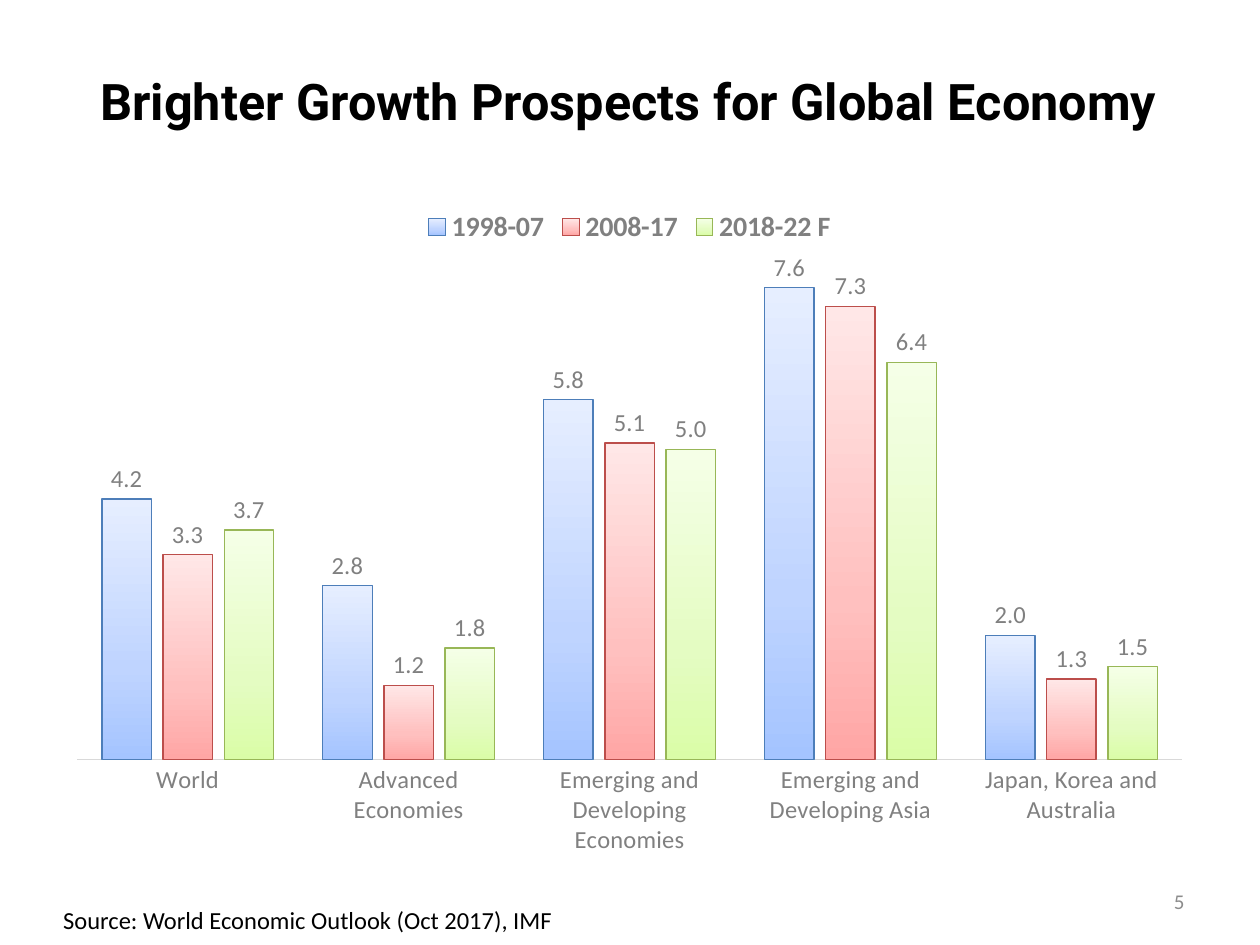
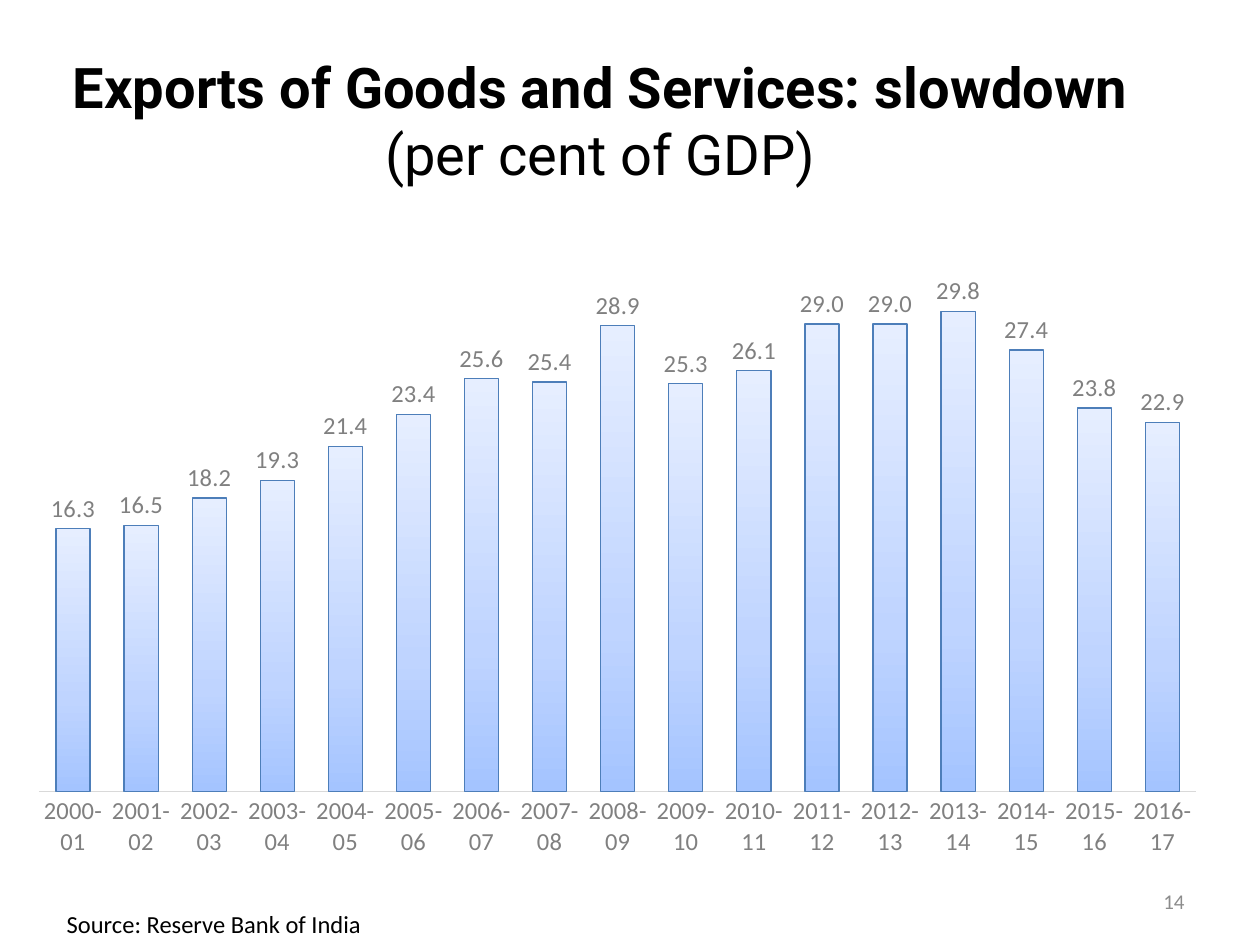
from lxml.etree import SubElement
from pptx import Presentation
from pptx.chart.data import CategoryChartData
from pptx.dml.color import RGBColor
from pptx.enum.chart import XL_CHART_TYPE, XL_LABEL_POSITION, XL_LEGEND_POSITION, XL_TICK_MARK
from pptx.enum.text import MSO_ANCHOR, MSO_AUTO_SIZE, PP_ALIGN
from pptx.oxml.ns import qn
from pptx.util import Pt

COLORS = {"text": "000000", "label": "808080", "number": "8C8C8C", "axis": "D9D9D9"}
BARS = [
    {"line": "4D7EB9", "stops": {0: "A4C4FF", 35: "BFD4FF", 100: "E6EEFF"}},
    {"line": "BC4E4B", "stops": {0: "FFA6A5", 35: "FFC0BF", 100: "FFE7E7"}},
    {"line": "98B757", "stops": {0: "DAFDA7", 35: "E4FCC2", 100: "F5FFE7"}},
]
GROWTH_REGIONS = ["World", "Advanced Economies", "Emerging and Developing Economies",
                  "Emerging and Developing Asia", "Japan, Korea and Australia"]
GROWTH = {
    "1998-07": [4.2, 2.8, 5.8, 7.6, 2.0],
    "2008-17": [3.3, 1.2, 5.1, 7.3, 1.3],
    "2018-22 F": [3.7, 1.8, 5.0, 6.4, 1.5],
}
EXPORT_YEARS = [f"{year}-{(year + 1) % 100:02d}" for year in range(2000, 2017)]
EXPORTS = {"Series 1": [16.3, 16.5, 18.2, 19.3, 21.4, 23.4, 25.6, 25.4, 28.9,
                        25.3, 26.1, 29.0, 29.0, 29.8, 27.4, 23.8, 22.9]}


class Deck:
    """Holds the shared style and the slide being built."""

    def __init__(self):
        """Start a 10 by 7.5 inch deck."""
        self.deck = Presentation()
        self.deck.slide_width, self.deck.slide_height = Pt(720), Pt(540)
        self.page = None

    def style(self, font, size, color="label", name="Calibri", bold=False):
        """Apply one text format to a font."""
        for key, value in {"size": Pt(size), "name": name, "bold": bold}.items():
            setattr(font, key, value)
        font.color.rgb = RGBColor.from_string(COLORS[color])

    def title(self, place, size, heading, detail=None):
        """Add a slide with a bold heading and an optional lighter second line."""
        self.page = self.deck.slides.add_slide(self.deck.slide_layouts[5])
        box = self.page.shapes.title
        for key, value in zip(("left", "top", "width", "height"), place):
            setattr(box, key, Pt(value))
        frame = box.text_frame
        frame.auto_size, frame.vertical_anchor = MSO_AUTO_SIZE.NONE, MSO_ANCHOR.MIDDLE
        para = frame.paragraphs[0]
        para.alignment = PP_ALIGN.CENTER
        span = para.add_run()
        span.text = heading
        self.style(span.font, size, "text", "Roboto", True)
        if detail:
            para.add_line_break()
            span = para.add_run()
            span.text = detail
            self.style(span.font, size, "text", "Roboto")

    def text(self, place, words, size, color, align=PP_ALIGN.LEFT, anchor=MSO_ANCHOR.TOP):
        """Add a line of text."""
        frame = self.page.shapes.add_textbox(*map(Pt, place)).text_frame
        frame.word_wrap, frame.vertical_anchor = True, anchor
        para = frame.paragraphs[0]
        para.alignment = align
        span = para.add_run()
        span.text = words
        self.style(span.font, size, color)

    def footer(self, left, top, source, number):
        """Add the source note and the page number."""
        self.text((left, top, 323, 24.5), source, 14, "text")
        self.text((516, 500.5, 168, 28.75), str(number), 12, "number",
                  PP_ALIGN.RIGHT, MSO_ANCHOR.MIDDLE)

    def chart(self, place, categories, values, top_value):
        """Add a column chart with gradient bars and a hidden value axis."""
        data = CategoryChartData(number_format="0.0")
        data.categories = categories
        for name, numbers in values.items():
            data.add_series(name, numbers)
        chart = self.page.shapes.add_chart(
            XL_CHART_TYPE.COLUMN_CLUSTERED, *map(Pt, place), data).chart
        self.style(chart.font, 14, "text")
        chart.has_title = False
        chart.has_legend = len(values) > 1
        if chart.has_legend:
            chart.legend.position = XL_LEGEND_POSITION.TOP
            chart.legend.include_in_layout = False
            self.style(chart.legend.font, 16, bold=True)
        self.axes(chart, top_value)
        plot = chart.plots[0]
        for key, value in {"gap_width": 100, "overlap": -24, "vary_by_categories": False}.items():
            setattr(plot, key, value)
        for series, look in zip(plot.series, BARS):
            self.bars(series, look)

    def axes(self, chart, top_value):
        """Format the category axis and hide the value axis."""
        axis = chart.category_axis
        axis.major_tick_mark = axis.minor_tick_mark = XL_TICK_MARK.NONE
        axis.format.line.width = Pt(0.75)
        axis.format.line.color.rgb = RGBColor.from_string(COLORS["axis"])
        self.style(axis.tick_labels.font, 14)
        axis._element.find(qn("c:txPr")).find(qn("a:bodyPr")).set("rot", "0")
        scale = {"visible": False, "has_major_gridlines": False,
                 "minimum_scale": 0, "maximum_scale": top_value}
        for key, value in scale.items():
            setattr(chart.value_axis, key, value)

    def bars(self, series, look):
        """Give a series its gradient, outline and value labels."""
        fill = series.format.fill
        fill.gradient()
        fill.gradient_angle = 90
        stops = series._element.find(".//" + qn("a:gsLst"))
        stops.clear()
        for position, color in look["stops"].items():
            stop = SubElement(stops, qn("a:gs"), pos=str(position * 1000))
            SubElement(stop, qn("a:srgbClr"), val=color)
        series.format.line.width = Pt(0.75)
        series.format.line.color.rgb = RGBColor.from_string(look["line"])
        labels = series.data_labels
        settings = {"show_value": True, "number_format": "0.0",
                    "number_format_is_linked": False,
                    "position": XL_LABEL_POSITION.OUTSIDE_END}
        for key, value in settings.items():
            setattr(labels, key, value)
        self.style(labels.font, 14)


def main():
    """Build both slides and save the deck."""
    show = Deck()
    show.title((0, 26, 718.5, 62.5), 28.8, "Brighter Growth Prospects for Global Economy")
    show.chart((31, 111.5, 657.5, 385), GROWTH_REGIONS, GROWTH, 8)
    show.footer(29, 513.5, "Source: World Economic Outlook (Oct 2017), IMF", 5)

    show.title((14.5, 26, 657.5, 85), 32, "Exports of Goods and Services: slowdown",
               "(per cent of GDP)")
    show.chart((8.5, 122.5, 689, 374.5), EXPORT_YEARS, EXPORTS, 35)
    show.footer(31, 516, "Source: Reserve Bank of India", 14)
    show.deck.save("out.pptx")


if __name__ == "__main__":
    main()
